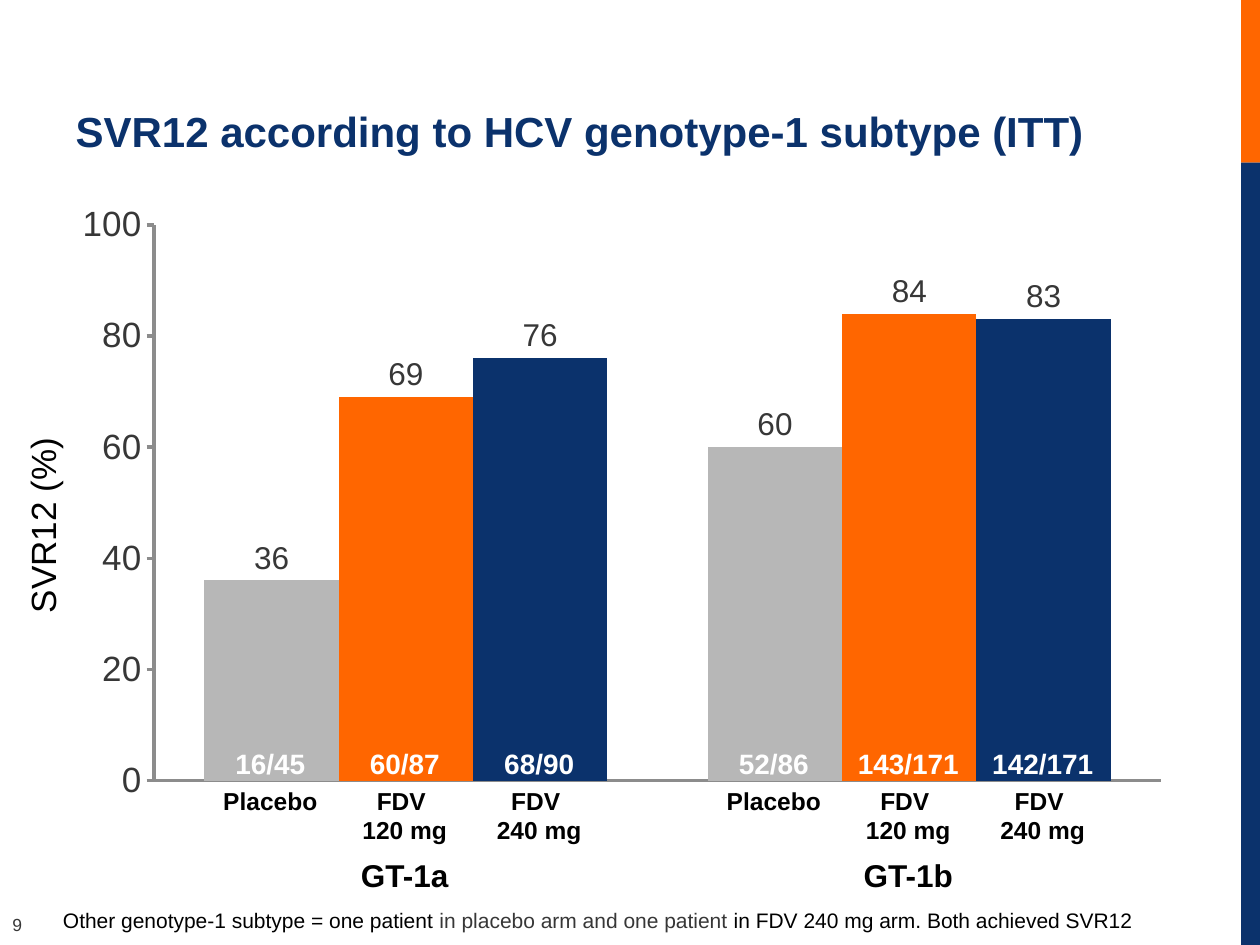
from lxml import etree
from pptx import Presentation
from pptx.chart.data import CategoryChartData
from pptx.dml.color import RGBColor
from pptx.enum.chart import XL_CHART_TYPE, XL_LABEL_POSITION, XL_TICK_LABEL_POSITION, XL_TICK_MARK
from pptx.enum.shapes import MSO_SHAPE
from pptx.enum.text import MSO_ANCHOR, PP_ALIGN
from pptx.oxml.ns import qn
from pptx.util import Cm, Pt

CLUSTERED = XL_CHART_TYPE.COLUMN_CLUSTERED
OUTSIDE_END = XL_LABEL_POSITION.OUTSIDE_END
NO_LABELS = XL_TICK_LABEL_POSITION.NONE
TICK_NONE, TICK_OUTSIDE = XL_TICK_MARK.NONE, XL_TICK_MARK.OUTSIDE
LEFT, CENTER = PP_ALIGN.LEFT, PP_ALIGN.CENTER
TOP, BOTTOM = MSO_ANCHOR.TOP, MSO_ANCHOR.BOTTOM

FONT = "Arial"
NAVY, ORANGE, GREY = "0B326C", "FF6600", "B7B7B7"
TEXT, BLACK, WHITE, AXIS = "373737", "000000", "FFFFFF", "8C8C8C"

# Content
TITLE = "SVR12 according to HCV genotype-1 subtype (ITT)"
AXIS_TITLE = "SVR12 (%)"
PAGE_NUMBER = "9"
SUBTYPES = ["GT-1a", "GT-1b"]
ARMS = [  # label, colour, SVR12 per subtype, patients per subtype
    ("Placebo", GREY, (36, 60), ("16/45", "52/86")),
    ("FDV \v120 mg", ORANGE, (69, 84), ("60/87", "143/171")),
    ("FDV \v240 mg", NAVY, (76, 83), ("68/90", "142/171")),
]
FOOTNOTE = [
    ("Other genotype-1 subtype = one patient ", BLACK),
    ("in placebo arm and one patient ", TEXT),
    ("in FDV 240 mg arm. Both achieved SVR12", BLACK),
]
SIDE_BAND = [(ORANGE, 0, 3.28), (NAVY, 3.28, 15.77)]  # colour, top, height

# Layout in cm
FIRST_BAR, BAR_STEP, SUBTYPE_STEP = 5.45, 2.71, 10.15
PLOT = {"x": 0.079, "y": 0.061, "w": 0.888, "h": 0.848}


def rgb(colour):
    return RGBColor.from_string(colour)


def style(font, size, colour, bold=False):
    font.name, font.size, font.bold = FONT, Pt(size), bold
    font.color.rgb = rgb(colour)


def add_text(slide, pieces, left, top, width, height, size, bold=False,
             align=CENTER, anchor=TOP, wrap=True):
    box = slide.shapes.add_textbox(Cm(left), Cm(top), Cm(width), Cm(height))
    frame = box.text_frame
    frame.word_wrap, frame.vertical_anchor = wrap, anchor
    paragraph = frame.paragraphs[0]
    paragraph.text = "\v".join(["".join(text for text, _ in pieces)]) if len(pieces) == 1 else ""
    if len(pieces) > 1:
        for text, _ in pieces:
            paragraph.add_run().text = text
    paragraph.alignment = align
    colours = [colour for _, colour in pieces]
    for number, run in enumerate(paragraph.runs):
        style(run.font, size, colours[min(number, len(colours) - 1)], bold)
    return box


def add_centred(slide, text, middle, top, width, height, size, colour, bold=True):
    return add_text(slide, [(text, colour)], middle - width / 2, top, width, height, size, bold)


def fix_plot_area(chart):
    plot_area = chart._chartSpace.chart.plotArea
    for old in plot_area.findall(qn("c:layout")):
        plot_area.remove(old)
    layout = etree.Element(qn("c:layout"))
    manual = etree.SubElement(layout, qn("c:manualLayout"))
    settings = {"layoutTarget": "inner", "xMode": "edge", "yMode": "edge", **PLOT}
    for tag, value in settings.items():
        etree.SubElement(manual, qn(f"c:{tag}")).set("val", str(value))
    plot_area.insert(0, layout)


def add_response_chart(slide):
    data = CategoryChartData()
    data.categories = SUBTYPES
    for label, _, rates, _ in ARMS:
        data.add_series(label.replace("\v", ""), rates)
    chart = slide.shapes.add_chart(CLUSTERED, Cm(1.3), Cm(3.73), Cm(22.86), Cm(13.21), data).chart
    chart.has_legend = chart.has_title = False
    style(chart.font, 18, TEXT)
    fix_plot_area(chart)

    bars = chart.plots[0]
    bars.gap_width, bars.overlap, bars.vary_by_categories = 75, 0, False
    for series, (_, colour, _, _) in zip(bars.series, ARMS):
        series.format.fill.solid()
        series.format.fill.fore_color.rgb = rgb(colour)
        labels = series.data_labels
        labels.show_value, labels.position = True, OUTSIDE_END
        style(labels.font, 18, TEXT)

    rate_axis, subtype_axis = chart.value_axis, chart.category_axis
    for axis in (rate_axis, subtype_axis):
        axis.has_major_gridlines = False
        axis.minor_tick_mark = TICK_NONE
        axis.format.line.color.rgb = rgb(AXIS)
        axis.format.line.width = Pt(2)
    rate_axis.minimum_scale, rate_axis.maximum_scale, rate_axis.major_unit = 0, 100, 20
    rate_axis.major_tick_mark = TICK_OUTSIDE
    style(rate_axis.tick_labels.font, 20, TEXT)
    subtype_axis.major_tick_mark = TICK_NONE
    subtype_axis.tick_label_position = NO_LABELS


def main():
    deck = Presentation()
    deck.slide_width, deck.slide_height = Cm(25.4), Cm(19.05)
    slide = deck.slides.add_slide(deck.slide_layouts[5])

    # Side band and page number
    for colour, top, height in SIDE_BAND:
        band = slide.shapes.add_shape(MSO_SHAPE.RECTANGLE, Cm(25.02), Cm(top), Cm(0.4), Cm(height))
        band.shadow.inherit = False
        band.fill.solid()
        band.fill.fore_color.rgb = rgb(colour)
        band.line.fill.background()
    add_text(slide, [(PAGE_NUMBER, TEXT)], 0, 18.31, 0.94, 0.68, 10, align=LEFT, wrap=False)

    # Title
    title = slide.shapes.title
    title.left, title.top, title.width, title.height = Cm(1.27), Cm(0.46), Cm(22.86), Cm(2.82)
    title.text_frame.text = TITLE
    title.text_frame.vertical_anchor = BOTTOM
    heading = title.text_frame.paragraphs[0]
    heading.alignment = LEFT
    style(heading.runs[0].font, 24, NAVY, True)

    # Chart with its axis title
    add_response_chart(slide)
    add_centred(slide, AXIS_TITLE, 0.86, 10.03, 4.37, 1.12, 20, BLACK, bold=False).rotation = 270

    # Patient counts, arm labels and subtype names under the bars
    for group, subtype in enumerate(SUBTYPES):
        first = FIRST_BAR + group * SUBTYPE_STEP
        for position, (label, _, _, patients) in enumerate(ARMS):
            middle = first + position * BAR_STEP
            add_centred(slide, patients[group], middle, 14.93, 3, 0.94, 16, WHITE)
            add_centred(slide, label, middle, 15.72, 3.18, 1.45, 14, BLACK)
        add_centred(slide, subtype, first + BAR_STEP, 17.13, 2.8, 1.02, 18, BLACK)

    # Footnote
    add_text(slide, FOOTNOTE, 1.02, 18.29, 22.28, 0.64, 12, align=LEFT, anchor=BOTTOM)

    deck.save("out.pptx")


if __name__ == "__main__":
    main()
